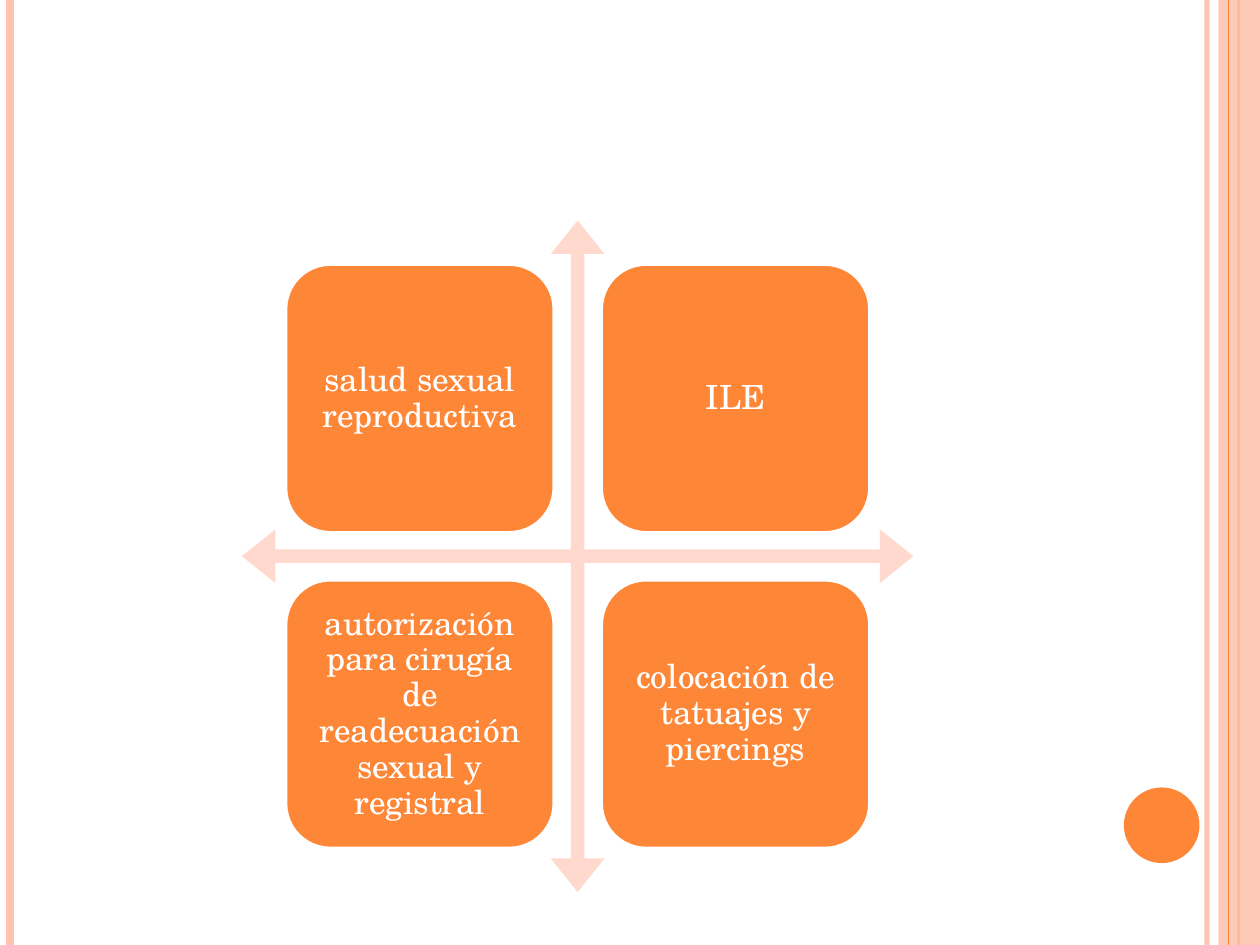
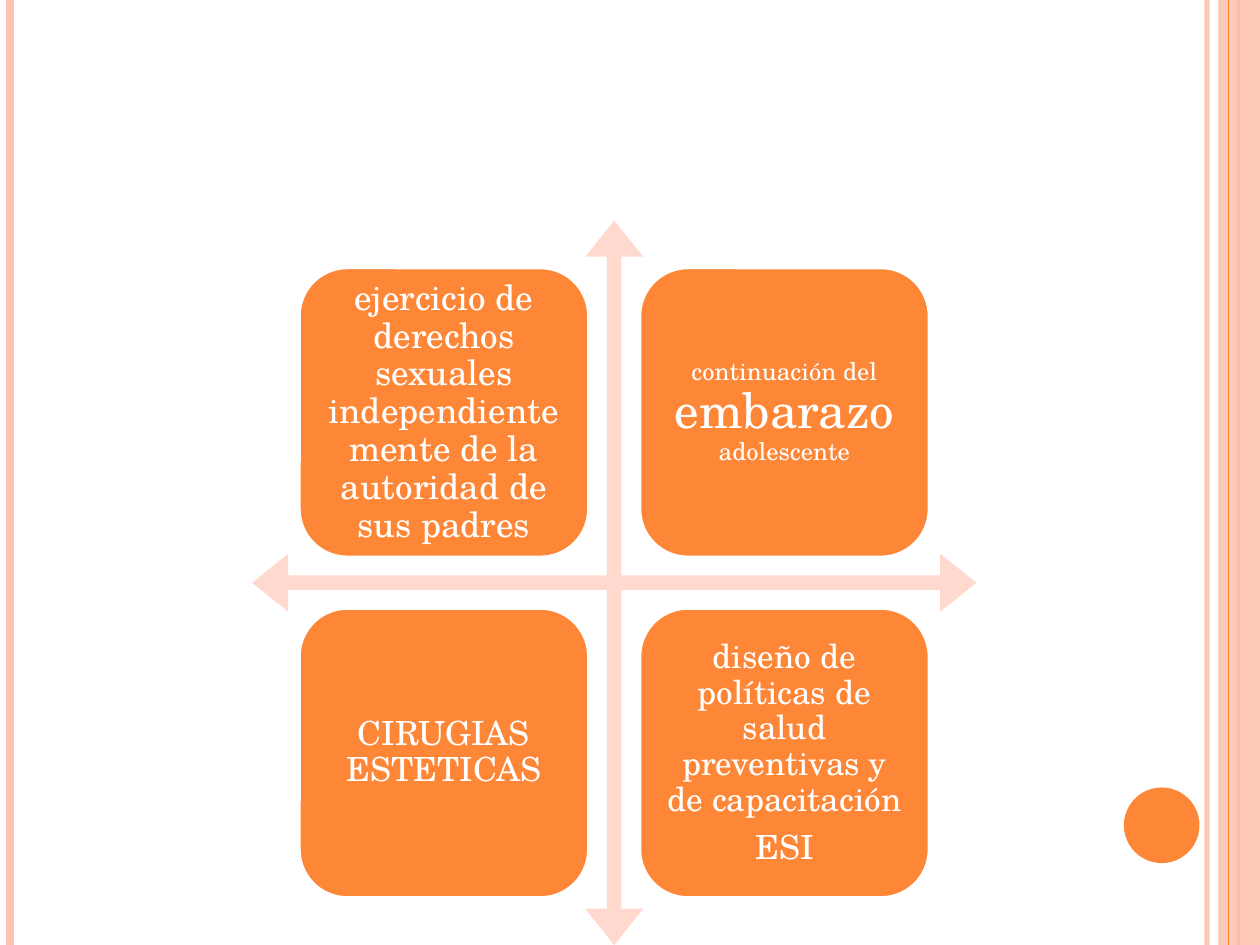
from lxml import etree
from pptx import Presentation
from pptx.dml.color import RGBColor
from pptx.enum.shapes import MSO_CONNECTOR, MSO_SHAPE
from pptx.enum.text import MSO_ANCHOR, PP_ALIGN
from pptx.oxml.ns import qn
from pptx.util import Inches, Pt

LINE = MSO_CONNECTOR.STRAIGHT
RECT = MSO_SHAPE.RECTANGLE
OVAL = MSO_SHAPE.OVAL
ROUND = MSO_SHAPE.ROUNDED_RECTANGLE
CROSS = MSO_SHAPE.QUAD_ARROW
MID = MSO_ANCHOR.MIDDLE
CENTER = PP_ALIGN.CENTER

FONT = "TeX Gyre Schola"
ORANGE, PEACH, PALE, WHITE = "FE8637", "FEC3AE", "FFD9CE", "FFFFFF"
WIDE, HIGH = 10, 7.5

RIGHTS = [
    [[("salud sexual reproductiva", 19)]],
    [[("ILE", 19)]],
    [[("autorización para cirugía de readecuación sexual y registral", 19)]],
    [[("colocación de tatuajes y piercings", 19)]],
]
CHOICES = [
    [[("ejercicio de derechos sexuales independientemente de la "
       "autoridad de sus padres", 20)]],
    [[("continuación del ", 14), ("embarazo", 28), (" adolescente", 14)]],
    [[("CIRUGIAS ESTETICAS", 19)]],
    [[("diseño de políticas de salud preventivas y de capacitación", 19)],
     [("ESI", 19)]],
]


def paint(fmt, color, alpha=100):
    """Give a fill a solid colour with an opacity in percent."""
    fmt.solid()
    fmt.fore_color.rgb = RGBColor.from_string(color)
    if alpha < 100:
        tone = fmt.fore_color._xFill.find(qn("a:srgbClr"))
        etree.SubElement(tone, qn("a:alpha"), val=str(alpha * 1000))


def add_form(slide, kind, box, color, alpha=100, edge=None):
    """Add a flat preset shape, with an optional edge of 2 points."""
    form = slide.shapes.add_shape(kind, *map(Inches, box))
    form.shadow.inherit = False
    paint(form.fill, color, alpha)
    if edge:
        paint(form.line.fill, edge)
        form.line.width = Pt(2)
    else:
        form.line.fill.background()
    return form


def add_rule(slide, x, color, width, alpha=100):
    """Add a vertical line over the full slide height."""
    rule = slide.shapes.add_connector(
        LINE, Inches(x), 0, Inches(x), Inches(HIGH))
    paint(rule.line.fill, color, alpha)
    rule.line.width = Pt(width)
    etree.SubElement(rule.element.spPr, qn("a:effectLst"))


def put_text(form, text, font=FONT, color=WHITE, inset=0.08, align=CENTER):
    """Write paragraphs of (words, size) runs into a shape."""
    frame = form.text_frame
    frame.word_wrap = True
    frame.vertical_anchor = MID
    frame.margin_left = frame.margin_right = Inches(inset)
    frame.margin_top = frame.margin_bottom = Inches(inset)
    for i, runs in enumerate(text):
        para = frame.paragraphs[0] if i == 0 else frame.add_paragraph()
        para.alignment = align
        para.line_spacing = 0.9
        para.space_after = Pt(0.35 * max(size for _, size in runs))
        for words, size in runs:
            run = para.add_run()
            run.text = words
            run.font.name = font
            run.font.size = Pt(size)
            run.font.color.rgb = RGBColor.from_string(color)


def add_trim(slide, layout):
    """Draw the side bands and the disc, and move them to the layout."""
    add_rule(slide, 9.58, PEACH, 3, alpha=93)
    add_rule(slide, 0.08, PEACH, 4.5)
    add_rule(slide, 9.83, ORANGE, 1.5)
    add_form(slide, RECT, (9.67, 0, 0.33, HIGH), PEACH, alpha=87)
    add_rule(slide, 9.75, ORANGE, 0.75)
    add_form(slide, OVAL, (8.92, 6.25, 0.6, 0.6), ORANGE)
    for part in list(slide.shapes):
        layout.shapes.element.append(part.element)


def add_grid(slide, left, top, size, texts):
    """Draw a cross of arrows with one tile in each quarter."""
    cross = add_form(slide, CROSS, (left, top, size, size), PALE)
    for i, value in enumerate((0.02, 0.04, 0.05)):
        cross.adjustments[i] = value
    side, edge = 0.4 * size, 0.065 * size
    step = size - side - 2 * edge
    for i, text in enumerate(texts):
        row, col = divmod(i, 2)
        box = (left + edge + col * step, top + edge + row * step, side, side)
        tile = add_form(slide, ROUND, box, ORANGE, edge=WHITE)
        put_text(tile, text, inset=0.06 if len(text[0]) > 1 else 0.08)


def main():
    """Build and save the slides."""
    deck = Presentation()
    deck.slide_width, deck.slide_height = Inches(WIDE), Inches(HIGH)
    blank = deck.slide_layouts[6]
    first, second = (deck.slides.add_slide(blank) for _ in range(2))
    add_trim(first, blank)
    add_grid(first, 1.92, 1.75, 5.33, RIGHTS)
    add_grid(second, 2, 1.75, 5.75, CHOICES)
    deck.save("out.pptx")


if __name__ == "__main__":
    main()
